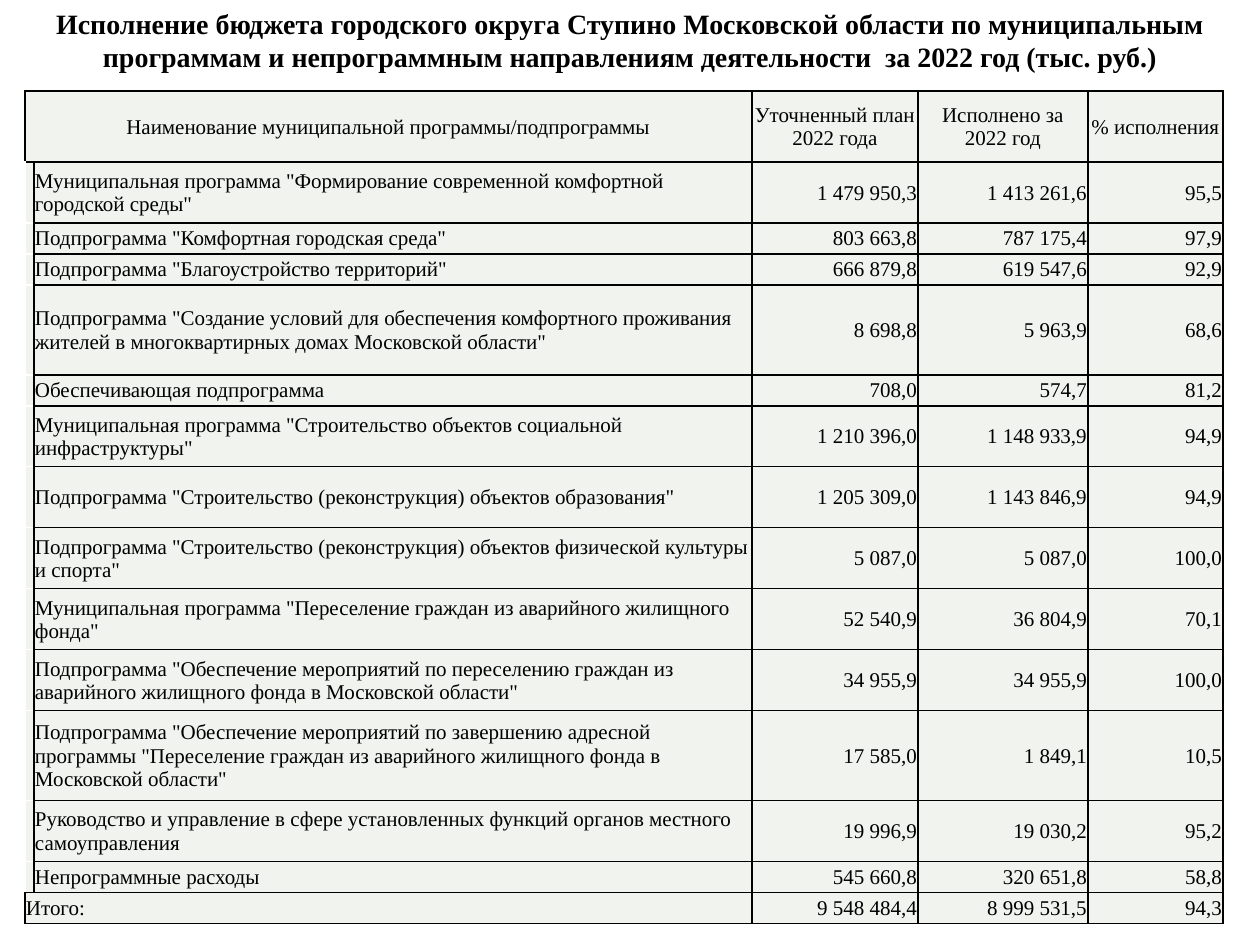
from dataclasses import dataclass

from lxml.etree import SubElement
from pptx import Presentation
from pptx.dml.color import RGBColor
from pptx.enum.text import MSO_ANCHOR as Anchor, MSO_AUTO_SIZE as AutoSize, PP_ALIGN as Align
from pptx.oxml.ns import qn
from pptx.util import Pt

PX = 914400 / 126


@dataclass(frozen=True)
class Theme:
    font: str = "Times New Roman"
    ink: str = "000000"
    paper: str = "FFFFFF"
    cell: str = "F0F3EE"
    title_size: int = 16
    table_size: int = 12
    border: int = 1


THEME = Theme()

TITLE = (
    "Исполнение бюджета городского округа Ступино Московской области по муниципальным "
    "программам и непрограммным направлениям деятельности  за 2022 год (тыс. руб.)"
)
HEADER = (
    "Наименование муниципальной программы/подпрограммы",
    "Уточненный план 2022 года",
    "Исполнено за 2022 год",
    "% исполнения",
)
HEADER_HEIGHT = 71
ONE_LINE, TWO_LINES, THREE_LINES = 31, 61, 90
COLUMN_WIDTHS = (9, 718, 166, 170, 135)

PROGRAMS = [
    (TWO_LINES, 'Муниципальная программа "Формирование современной комфортной городской среды"',
     "1 479 950,3", "1 413 261,6", "95,5"),
    (ONE_LINE, 'Подпрограмма "Комфортная городская среда"', "803 663,8", "787 175,4", "97,9"),
    (ONE_LINE, 'Подпрограмма "Благоустройство территорий"', "666 879,8", "619 547,6", "92,9"),
    (THREE_LINES, 'Подпрограмма "Создание условий для обеспечения комфортного проживания жителей '
     'в многоквартирных домах Московской области"', "8 698,8", "5 963,9", "68,6"),
    (ONE_LINE, "Обеспечивающая подпрограмма", "708,0", "574,7", "81,2"),
    (TWO_LINES, 'Муниципальная программа "Строительство объектов социальной инфраструктуры"',
     "1 210 396,0", "1 148 933,9", "94,9"),
    (TWO_LINES, 'Подпрограмма "Строительство (реконструкция) объектов образования"',
     "1 205 309,0", "1 143 846,9", "94,9"),
    (TWO_LINES, 'Подпрограмма "Строительство (реконструкция) объектов физической культуры и спорта"',
     "5 087,0", "5 087,0", "100,0"),
    (TWO_LINES, 'Муниципальная программа "Переселение граждан из аварийного жилищного фонда"',
     "52 540,9", "36 804,9", "70,1"),
    (TWO_LINES, 'Подпрограмма "Обеспечение мероприятий по переселению граждан из аварийного '
     'жилищного фонда в Московской области"', "34 955,9", "34 955,9", "100,0"),
    (THREE_LINES, 'Подпрограмма "Обеспечение мероприятий по завершению адресной программы '
     '"Переселение граждан из аварийного жилищного фонда в Московской области"',
     "17 585,0", "1 849,1", "10,5"),
    (TWO_LINES, "Руководство и управление в сфере установленных функций органов местного "
     "самоуправления", "19 996,9", "19 030,2", "95,2"),
    (ONE_LINE, "Непрограммные расходы", "545 660,8", "320 651,8", "58,8"),
]
TOTAL = ("Итого:", "9 548 484,4", "8 999 531,5", "94,3")


def px(length):
    return round(length * PX)


def place(shape, left, top, width, height):
    shape.left, shape.top, shape.width, shape.height = map(px, (left, top, width, height))


def add_run(para, text, size, bold=False):
    span = para.add_run()
    span.text = text
    span.font.name = THEME.font
    span.font.size = Pt(size)
    span.font.bold = bold
    span.font.color.rgb = RGBColor.from_string(THEME.ink)


def add_title(page):
    box = page.shapes.title
    place(box, 0, 0, 1260, 81)
    frame = box.text_frame
    frame.word_wrap = True
    frame.auto_size = AutoSize.SHAPE_TO_FIT_TEXT
    frame.vertical_anchor = Anchor.TOP
    para = frame.paragraphs[0]
    para.alignment = Align.CENTER
    add_run(para, TITLE, THEME.title_size, bold=True)


def set_borders(cell, left, right, top, bottom):
    properties = cell._tc.get_or_add_tcPr()
    for side, color in zip("LRTB", (left, right, top, bottom)):
        line = SubElement(properties, qn(f"a:ln{side}"), w=str(Pt(THEME.border)))
        SubElement(SubElement(line, qn("a:solidFill")), qn("a:srgbClr"), val=color)


def style_cell(cell, borders):
    set_borders(cell, *borders)
    cell.fill.solid()
    cell.fill.fore_color.rgb = RGBColor.from_string(THEME.cell)
    cell.vertical_anchor = Anchor.MIDDLE
    cell.margin_left = cell.margin_right = cell.margin_top = px(1)
    cell.margin_bottom = 0


def write_cell(cell, text, alignment):
    para = cell.text_frame.paragraphs[0]
    para.alignment = alignment
    add_run(para, text, THEME.table_size)


def shrink_empty_cell(cell):
    para = cell.text_frame.paragraphs[0]
    SubElement(para._p, qn("a:endParaRPr"), sz=str(THEME.table_size * 100))


def indent_borders(row, last):
    top = THEME.ink if row == 1 else THEME.paper
    bottom = THEME.ink if row == last else THEME.paper
    return THEME.paper, THEME.ink, top, bottom


def write_row(table, row, texts, alignments):
    for column, (text, alignment) in enumerate(zip(texts, alignments), start=1):
        spans_indent = column == 1 and table.cell(row, 0).is_merge_origin
        write_cell(table.cell(row, 0 if spans_indent else column), text, alignment)


def add_budget_table(page):
    heights = [HEADER_HEIGHT, *(program[0] for program in PROGRAMS), ONE_LINE]
    total_row = len(heights) - 1
    frame = page.shapes.add_table(len(heights), len(COLUMN_WIDTHS), 0, 0, px(1), px(1))
    place(frame, 25, 91, sum(COLUMN_WIDTHS), sum(heights))
    table = frame.table
    table.first_row = table.horz_banding = False
    for column, width in zip(table.columns, COLUMN_WIDTHS):
        column.width = px(width)
    for row, height in enumerate(heights):
        table.rows[row].height = px(height)
        merged = row in (0, total_row)
        for column in range(len(COLUMN_WIDTHS)):
            indent = column == 0 and not merged
            borders = indent_borders(row, total_row - 1) if indent else (THEME.ink,) * 4
            style_cell(table.cell(row, column), borders)
        if merged:
            table.cell(row, 0).merge(table.cell(row, 1))
        else:
            shrink_empty_cell(table.cell(row, 0))

    figures = (Align.LEFT,) + (Align.RIGHT,) * 3
    write_row(table, 0, HEADER, (Align.CENTER,) * 4)
    for row, (_, *texts) in enumerate(PROGRAMS, start=1):
        write_row(table, row, texts, figures)
    write_row(table, total_row, TOTAL, figures)


def main():
    deck = Presentation()
    deck.slide_width, deck.slide_height = px(1260), px(945)
    page = deck.slides.add_slide(deck.slide_layouts[5])
    add_title(page)
    add_budget_table(page)
    deck.save("out.pptx")


if __name__ == "__main__":
    main()
